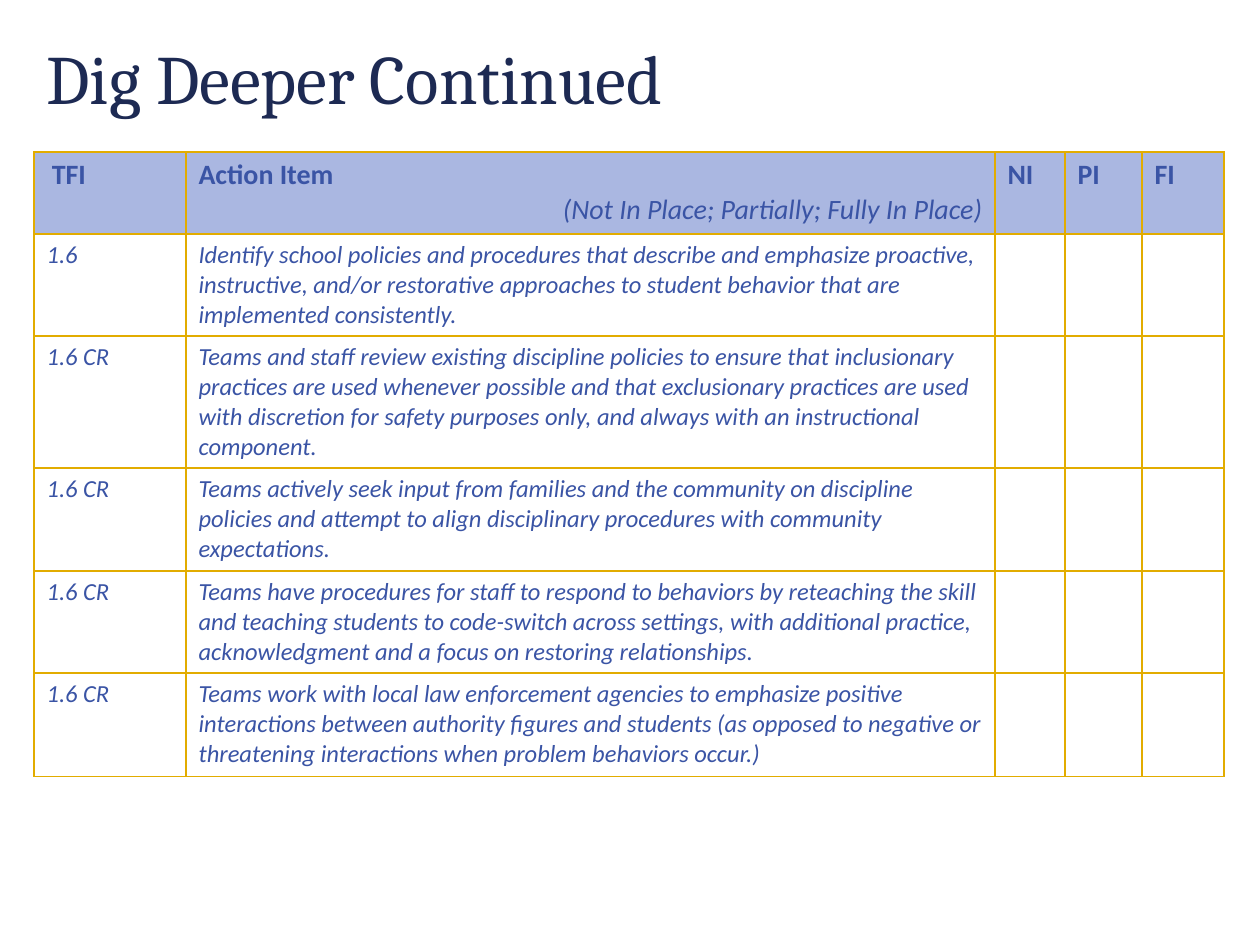
from lxml import etree
from pptx import Presentation
from pptx import util as u
from pptx.dml.color import RGBColor
from pptx.enum import text
from pptx.oxml.ns import qn

PX = 914400 / 126
COLORS = {"title": "1D2A53", "body": "3A54A5", "header": "AAB7E1",
          "border": "E2AC00", "black": "000000"}

COLUMNS = [152, 809, 70, 77, 82]
ROW_HEIGHTS = [82, 102, 132, 103, 102, 103]
RATINGS = ["NI", "PI", "FI"]
ACTIONS = [
    ("1.6", "Identify school policies and procedures that describe and emphasize "
     "proactive, instructive, and/or restorative approaches to student behavior "
     "that are implemented consistently."),
    ("1.6 CR", "Teams and staff review existing discipline policies to ensure that "
     "inclusionary practices are used whenever possible and that exclusionary "
     "practices are used with discretion for safety purposes only, and always "
     "with an instructional component."),
    ("1.6 CR", "Teams actively seek input from families and the community on "
     "discipline policies and attempt to align disciplinary procedures with "
     "community expectations."),
    ("1.6 CR", "Teams have procedures for staff to respond to behaviors by "
     "reteaching the skill and teaching students to code-switch across settings, "
     "with additional practice, acknowledgment and a focus on restoring "
     "relationships."),
    ("1.6 CR", "Teams work with local law enforcement agencies to emphasize "
     "positive interactions between authority figures and students (as opposed "
     "to negative or threatening interactions when problem behaviors occur.)"),
]


def px(length):
    return u.Emu(round(length * PX))


def write(paragraph, words, size=14, font="Calibri", color="body", bold=False,
          italic=False, align=text.PP_ALIGN.LEFT):
    paragraph.alignment = align
    # An empty cell keeps its format on the paragraph
    target = paragraph.add_run() if words else paragraph
    if words:
        target.text = words
    target.font.size = u.Pt(size)
    target.font.name = font
    target.font.bold = bold
    target.font.italic = italic
    target.font.color.rgb = RGBColor.from_string(COLORS[color])


def add_borders(cell, bottom=1):
    properties = cell._tc.get_or_add_tcPr()
    for side, width in (("L", 1), ("R", 1), ("T", 1), ("B", bottom)):
        line = etree.SubElement(properties, qn(f"a:ln{side}"), w=str(u.Pt(width)))
        fill = etree.SubElement(line, qn("a:solidFill"))
        etree.SubElement(fill, qn("a:srgbClr"), val=COLORS["border"])


def add_title(slide):
    title = slide.shapes.title
    title.left, title.top, title.width, title.height = map(px, (34, 33, 963, 88))
    title.text_frame.vertical_anchor = text.MSO_ANCHOR.MIDDLE
    write(title.text_frame.paragraphs[0], "Dig Deeper Continued", size=39.6,
          font="Cambria", color="title")


def fill_header(cells):
    tfi, action, *ratings = [cell.text_frame for cell in cells]
    write(tfi.paragraphs[0], " ", size=12, font="Times New Roman", color="black")
    write(tfi.paragraphs[0], "TFI", size=16, bold=True)
    write(action.paragraphs[0], "Action Item", size=16, bold=True)
    write(action.add_paragraph(), "(Not In Place; Partially; Fully In Place)",
          size=16, italic=True, align=text.PP_ALIGN.RIGHT)
    for frame, rating in zip(ratings, RATINGS):
        write(frame.paragraphs[0], rating, size=16, bold=True)


def add_action_table(slide):
    table = slide.shapes.add_table(
        len(ROW_HEIGHTS), len(COLUMNS), px(34), px(152),
        px(sum(COLUMNS)), px(sum(ROW_HEIGHTS))).table
    table.horz_banding = False
    for column, width in zip(table.columns, COLUMNS):
        column.width = px(width)
    for row, height in zip(table.rows, ROW_HEIGHTS):
        row.height = px(height)

    # Borders and fills
    last = len(ROW_HEIGHTS) - 1
    for index, row in enumerate(table.rows):
        for cell in row.cells:
            add_borders(cell, bottom=0.5 if index == last else 1)
            if index == 0:
                cell.fill.solid()
                cell.fill.fore_color.rgb = RGBColor.from_string(COLORS["header"])
            else:
                cell.fill.background()

    # Header, then one row per action with blank rating cells
    fill_header(table.rows[0].cells)
    for index, (tfi, action) in enumerate(ACTIONS, start=1):
        row_words = [tfi, action] + [""] * len(RATINGS)
        for cell, words in zip(table.rows[index].cells, row_words):
            write(cell.text_frame.paragraphs[0], words, italic=True)


def main():
    deck = Presentation()
    deck.slide_width, deck.slide_height = u.Inches(10), u.Inches(7.5)
    slide = deck.slides.add_slide(deck.slide_layouts[5])
    add_title(slide)
    add_action_table(slide)
    deck.save("out.pptx")


if __name__ == "__main__":
    main()
